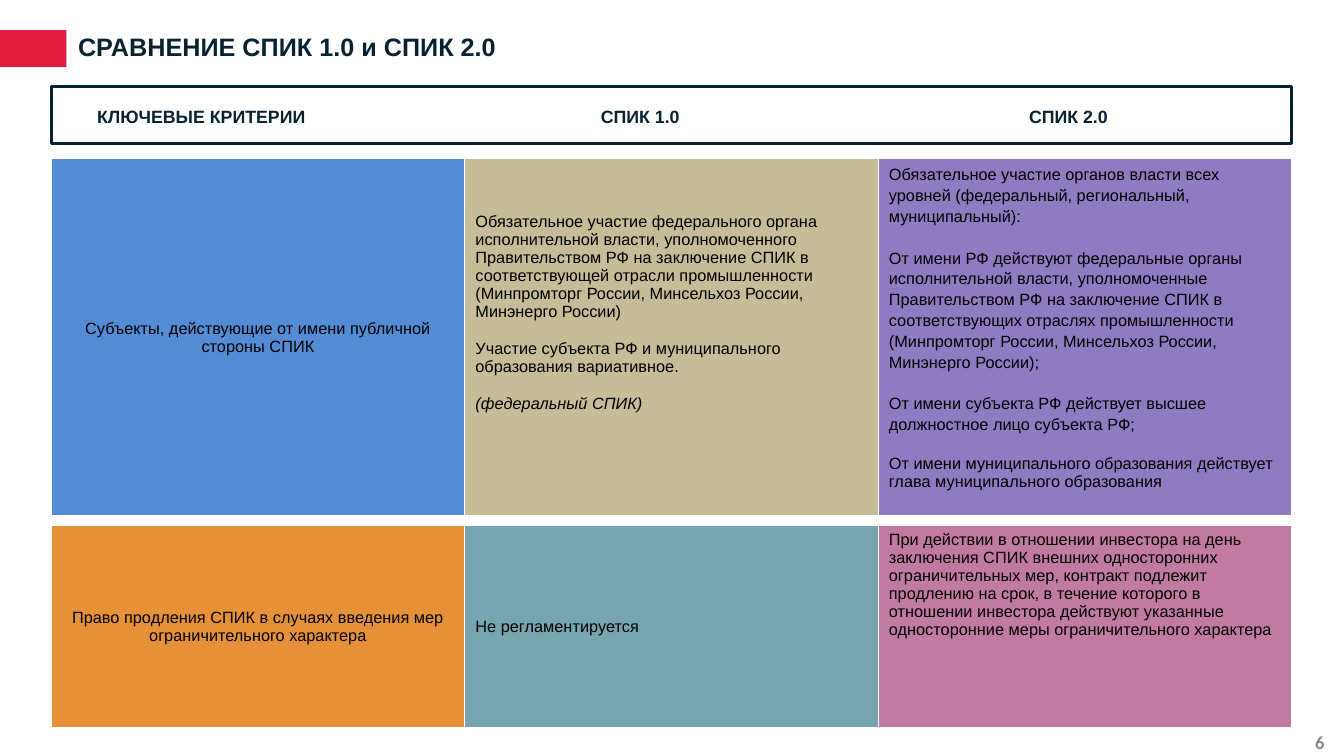
import pptx
import pptx.util
import pptx.dml.color
import pptx.enum.shapes
import pptx.enum.text
import pptx.oxml.ns
from lxml import etree
from dataclasses import dataclass

Pt = pptx.util.Pt
RGBColor = pptx.dml.color.RGBColor
ALIGN = pptx.enum.text.PP_ALIGN
ANCHOR = pptx.enum.text.MSO_ANCHOR
RECTANGLE = pptx.enum.shapes.MSO_SHAPE.RECTANGLE

WHITE = RGBColor(0xFF, 0xFF, 0xFF)
BLACK = RGBColor(0x00, 0x00, 0x00)
NAVY = RGBColor(0x09, 0x22, 0x31)
RED = RGBColor(0xDF, 0x1C, 0x40)
GREY = RGBColor(0x88, 0x88, 0x88)
BLUE = RGBColor(0x53, 0x8C, 0xD5)
SAND = RGBColor(0xC4, 0xBD, 0x97)
VIOLET = RGBColor(0x8E, 0x7C, 0xC3)
ORANGE = RGBColor(0xE6, 0x91, 0x38)
TEAL = RGBColor(0x76, 0xA5, 0xAF)
PINK = RGBColor(0xC2, 0x7B, 0xA0)

LEFT, WIDTH = 34.6, 837.3
BORDERS = {"a:lnL": 1, "a:lnR": 1, "a:lnT": 1, "a:lnB": 3}


@dataclass
class Para:
    text: str
    spacing: float = 1.0
    gap: float = 0
    italic: bool = False


@dataclass
class Criterion:
    fill: RGBColor
    paras: list
    align: ALIGN = ALIGN.LEFT
    anchor: ANCHOR = ANCHOR.MIDDLE
    bottom: float = 3.6


SUBJECTS = [
    Criterion(BLUE, [Para("Субъекты, действующие от имени публичной стороны СПИК")],
              align=ALIGN.CENTER),
    Criterion(SAND, [
        Para("Обязательное участие федерального органа исполнительной власти, "
             "уполномоченного Правительством РФ на заключение СПИК в соответствующей "
             "отрасли промышленности (Минпромторг России, Минсельхоз России, "
             "Минэнерго России)"),
        Para("Участие субъекта РФ и муниципального образования вариативное.", gap=12.5),
        Para("(федеральный СПИК)", gap=12.5, italic=True),
    ], bottom=37.5),
    Criterion(VIOLET, [
        Para("Обязательное участие органов власти всех уровней (федеральный, "
             "региональный, муниципальный):", 1.15),
        Para("От имени РФ действуют федеральные органы исполнительной власти, "
             "уполномоченные Правительством РФ на заключение СПИК в соответствующих "
             "отраслях промышленности (Минпромторг России, Минсельхоз России, "
             "Минэнерго России);", 1.15, 14),
        Para("От имени субъекта РФ действует высшее должностное лицо субъекта РФ;",
             1.15, 14),
        Para("От имени муниципального образования действует глава муниципального "
             "образования", gap=14),
    ], anchor=ANCHOR.TOP),
]

EXTENSION = [
    Criterion(ORANGE, [Para("Право продления СПИК в случаях введения мер "
                            "ограничительного характера")], align=ALIGN.CENTER),
    Criterion(TEAL, [Para("Не регламентируется")]),
    Criterion(PINK, [
        Para("При действии в отношении инвестора на день заключения СПИК внешних "
             "односторонних ограничительных мер, контракт подлежит продлению на срок, "
             "в течение которого в отношении инвестора действуют указанные "
             "односторонние меры ограничительного характера"),
    ], anchor=ANCHOR.TOP),
]


def set_font(p, size, color, bold=False, name="Arial"):
    p.font.name = name
    p.font.size = Pt(size)
    p.font.bold = bold
    p.font.color.rgb = color


def set_margins(frame, left, top, right, bottom):
    frame.margin_left, frame.margin_top = Pt(left), Pt(top)
    frame.margin_right, frame.margin_bottom = Pt(right), Pt(bottom)


def add_label(slide, box, text, size, color, name="Arial"):
    tf = slide.shapes.add_textbox(*map(Pt, box)).text_frame
    tf.word_wrap = True
    set_margins(tf, 0.7, 0.7, 0, 0)
    p = tf.paragraphs[0]
    p.text = text
    set_font(p, size, color, True, name)


def add_rectangle(slide, box):
    sp = slide.shapes.add_shape(RECTANGLE, *map(Pt, box))
    sp.shadow.inherit = False
    return sp


def add_header(slide, titles, tab_stops):
    """Framed line of column titles, spaced by tab stops."""
    sp = add_rectangle(slide, (LEFT, 58.3, WIDTH, 38.9))
    sp.fill.background()
    sp.line.color.rgb = NAVY
    sp.line.width = Pt(2.04)
    tf = sp.text_frame
    tf.vertical_anchor = ANCHOR.MIDDLE
    set_margins(tf, 31, 2, 0, 0)
    p = tf.paragraphs[0]
    p.text = "\t".join(titles)
    p.alignment = ALIGN.LEFT
    set_font(p, 12, NAVY, True)
    qn = pptx.oxml.ns.qn
    tabs = etree.Element(qn("a:tabLst"))
    for stop in tab_stops:
        etree.SubElement(tabs, qn("a:tab"), pos=str(Pt(stop)), algn="l")
    p.font.fill  # the run defaults must follow the tab list
    p._p.get_or_add_pPr().insert(0, tabs)


def set_borders(cell):
    qn = pptx.oxml.ns.qn
    for i, (tag, width) in enumerate(BORDERS.items()):
        ln = etree.Element(qn(tag), w=str(Pt(width)))
        fill = etree.SubElement(ln, qn("a:solidFill"))
        etree.SubElement(fill, qn("a:srgbClr"), val=str(WHITE))
        cell._tc.get_or_add_tcPr().insert(i, ln)


def fill_cell(cell, criterion):
    cell.fill.solid()
    cell.fill.fore_color.rgb = criterion.fill
    cell.vertical_anchor = criterion.anchor
    set_margins(cell, 7.2, 3.6, 7.2, criterion.bottom)
    set_borders(cell)
    tf = cell.text_frame
    for i, para in enumerate(criterion.paras):
        p = tf.add_paragraph() if i else tf.paragraphs[0]
        p.text = para.text
        p.alignment = criterion.align
        p.line_spacing = para.spacing
        p.space_before = Pt(para.gap)
        set_font(p, 11, BLACK)
        p.font.italic = para.italic


def add_row_table(slide, top, height, criteria):
    frame = slide.shapes.add_table(1, len(criteria), Pt(LEFT), Pt(top),
                                   Pt(WIDTH), Pt(height))
    table = frame.table
    table.first_row = table.horz_banding = False
    for cell, criterion in zip(table.rows[0].cells, criteria):
        fill_cell(cell, criterion)


def main():
    prs = pptx.Presentation()
    prs.slide_width, prs.slide_height = Pt(907.2), Pt(510.5)
    slide = prs.slides.add_slide(prs.slide_layouts[6])

    add_header(slide, ["КЛЮЧЕВЫЕ КРИТЕРИИ", "СПИК 1.0", "СПИК 2.0"], [340, 629])
    add_label(slide, (52, 20.5, 305.3, 22.3), "СРАВНЕНИЕ СПИК 1.0 и СПИК 2.0", 17, NAVY)
    bar = add_rectangle(slide, (0, 20.3, 44.8, 25))
    bar.fill.solid()
    bar.fill.fore_color.rgb = RED
    bar.line.fill.background()
    add_label(slide, (887, 493, 17.3, 14.4), "6", 12.5, GREY, "Calibri")
    add_row_table(slide, 106.8, 227.5, SUBJECTS)
    add_row_table(slide, 354.5, 138, EXTENSION)

    prs.save("out.pptx")


if __name__ == "__main__":
    main()
